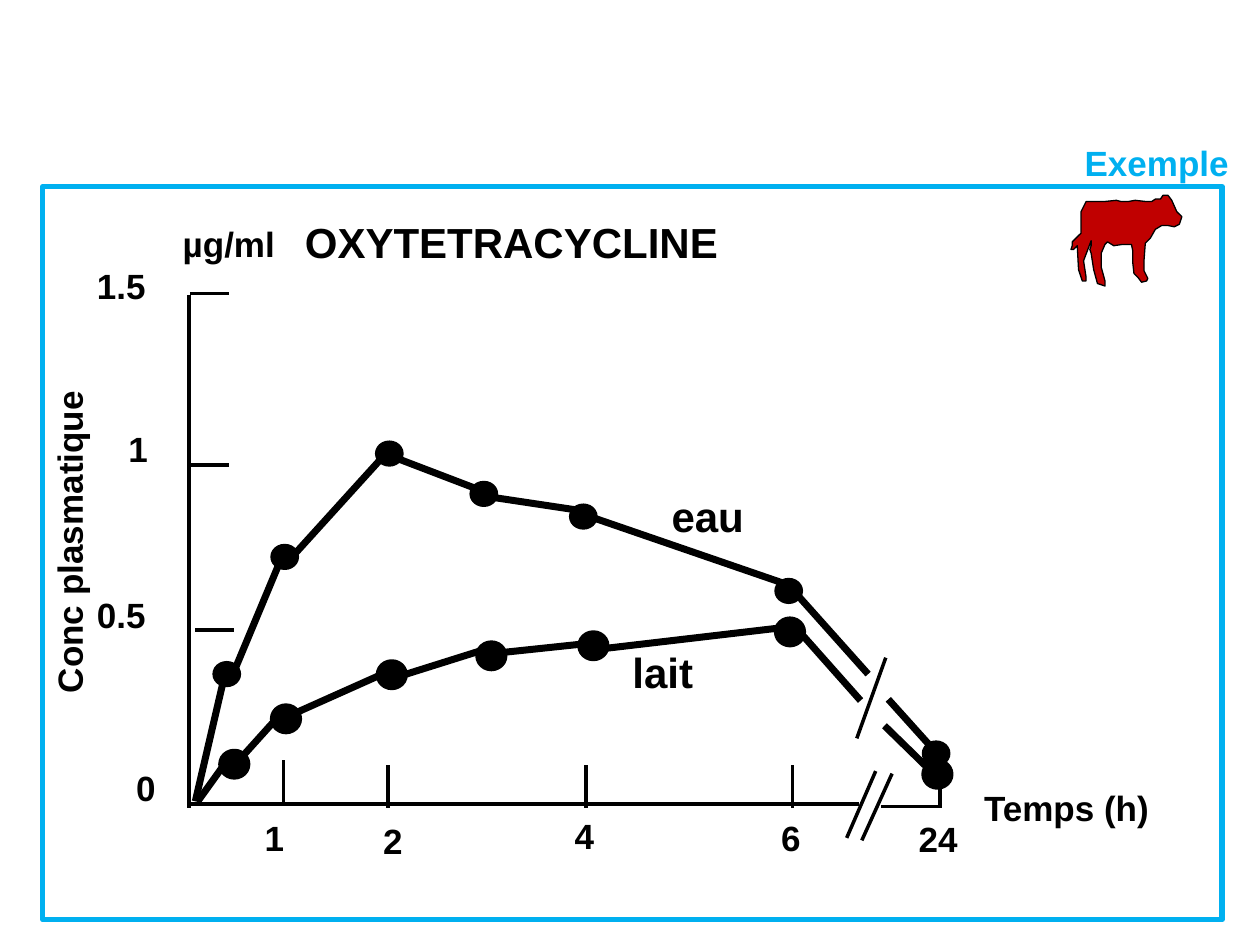
from lxml import etree
from pptx import Presentation
from pptx import util as u
from pptx.dml.color import RGBColor
from pptx.enum import shapes, text
from pptx.oxml.ns import qn

COLS = 100
WIDTH = u.Inches(10)
CELL = WIDTH // COLS
INK = {"black": "000000", "blue": "00B0F0", "red": "C00000"}

WATER_DOTS = [(17, 52.6), (21.6, 43.3), (29.9, 35.1), (37.4, 38.3),
              (45.3, 40.1), (61.6, 46), (73.3, 58.9)]
MILK_DOTS = [(17.6, 59.7), (21.7, 56.1), (30.1, 52.6), (38, 51.1),
             (46.1, 50.3), (61.7, 49.2), (73.4, 60.5)]
WATER = [(15.5, 63.6, 17.9, 53.3), (18.2, 54.2, 22.5, 43.9),
         (23, 44.4, 30.8, 35.8), (31.3, 36.3, 38.1, 38.9),
         (38.6, 39.4, 46.6, 40.6), (47.1, 41.1, 62.5, 46.4),
         (63, 46.9, 68.9, 53.5), (70.5, 55.5, 74.1, 59.5)]
MILK = [(15.7, 63.6, 18.5, 59.7), (19, 60.3, 22.7, 56.2),
        (23.2, 56.7, 30.8, 53.3), (31.3, 53.8, 38.3, 51.6),
        (38.8, 51.9, 47.3, 51), (47.7, 51.5, 63.1, 49.7),
        (63.6, 50.3, 68.3, 55.6), (70.2, 57.6, 74.5, 61.8)]
AXES = [(15.1, 63.8, 68.2, 63.8), (15, 64.1, 15, 23.4),
        (74.7, 64, 69.9, 64)]
BREAKS = [(70.3, 52.2, 68, 58.6), (69.5, 61.2, 67.2, 66.5),
          (70.8, 61.4, 68.4, 66.7)]
X_TICKS = [(22.5, 63.7), (30.8, 64.1), (46.5, 64.1), (62.9, 64.1), (74.6, 64.1)]
Y_TICKS = [(15.1, 23.3), (15.1, 36.9), (15.5, 50)]
SCALES = [("1", 9.5, 34, 3), ("1", 20.3, 64.9, 3), ("2", 29.7, 65.1, 3),
          ("4", 44.9, 64.7, 3), ("6", 61.3, 64.9, 3), ("24", 72.2, 65, 4.5),
          ("0.5", 7, 47.2, 5.3), ("0", 10.1, 60.9, 3), ("1.5", 7, 21.1, 5.3)]
COW = [(12, 69), (9, 69), (8, 66), (7, 63), (6, 60), (5, 41), (2, 44), (0, 44),
       (1, 41), (1, 38), (8, 31), (8, 14), (12, 6), (26, 6), (36, 5), (40, 6),
       (45, 6), (51, 5), (60, 6), (64, 6), (67, 4), (71, 4), (73, 1), (77, 1),
       (80, 5), (84, 14), (88, 18), (86, 24), (82, 26), (77, 25), (72, 25),
       (67, 28), (63, 35), (59, 39), (58, 52), (58, 61), (61, 67), (60, 69),
       (56, 70), (53, 66), (50, 63), (49, 54), (49, 45), (48, 40), (41, 40),
       (34, 41), (29, 38), (27, 40), (24, 47), (24, 58), (27, 69), (27, 73),
       (24, 72), (21, 71), (18, 60), (16, 47), (15, 44), (16, 41), (16, 37),
       (13, 45), (10, 53), (12, 66)]


def grid(*cells):
    return [int(n * CELL) for n in cells]


def tint(name):
    return RGBColor.from_string(INK[name])


def paint(shape, fill, edge, weight):
    shape.shadow.inherit = False
    if fill:
        shape.fill.solid()
        shape.fill.fore_color.rgb = tint(fill)
    else:
        shape.fill.background()
    shape.line.color.rgb = tint(edge)
    shape.line.width = u.Pt(weight)


def label(slide, words, box, size=20, color="black", space=0.9,
          pad=(0.7, 0.3), turn=0):
    shape = slide.shapes.add_textbox(*grid(*box))
    shape.rotation = turn
    frame = shape.text_frame
    frame.word_wrap = False
    frame.auto_size = text.MSO_AUTO_SIZE.SHAPE_TO_FIT_TEXT
    frame.margin_left = frame.margin_right = grid(pad[0])[0]
    frame.margin_top = frame.margin_bottom = grid(pad[1])[0]
    para = frame.paragraphs[0]
    para.line_spacing = space
    run = para.add_run()
    run.text = words
    run.font.name = "Arial"
    run.font.size = u.Pt(size)
    run.font.bold = True
    run.font.color.rgb = tint(color)


def strokes(slide, lines, weight):
    for ends in lines:
        line = slide.shapes.add_connector(shapes.MSO_CONNECTOR.STRAIGHT, *grid(*ends))
        line.line.color.rgb = tint("black")
        line.line.width = u.Pt(weight)
        etree.SubElement(line._element.spPr, qn("a:effectLst"))


def dots(slide, spots, high, weight):
    for left, top in spots:
        dot = slide.shapes.add_shape(shapes.MSO_SHAPE.OVAL, *grid(left, top, 2, high))
        paint(dot, "black", "black", weight)


def cow(slide):
    pen = slide.shapes.build_freeform(*COW[0], scale=CELL / 10)
    pen.add_line_segments(COW[1:], close=True)
    paint(pen.convert_to_shape(*grid(85, 15.4)), "red", "black", 0.75)


def main():
    deck = Presentation()
    deck.slide_width, deck.slide_height = WIDTH, WIDTH * 3 // 4
    slide = deck.slides.add_slide(deck.slide_layouts[6])

    frame = slide.shapes.add_shape(shapes.MSO_SHAPE.RECTANGLE,
                                   *grid(3.4, 14.8, 93.6, 58.2))
    paint(frame, None, "blue", 3)

    label(slide, "eau", (52.6, 39.1, 7.2, 4.2), size=24)
    label(slide, "lait", (49.5, 51.5, 6.3, 4.2), size=24)
    label(slide, "µg/ml", (13.8, 17.9, 8.8, 3.4), space=0.85)
    label(slide, "OXYTETRACYCLINE", (23.5, 17.3, 34.5, 4.2), size=24)
    label(slide, "Temps (h)", (77.4, 62.6, 14.6, 3.4), space=0.85)
    for words, left, top, wide in SCALES:
        label(slide, words, (left, top, wide, 3.6))

    dots(slide, WATER_DOTS, 1.8, 2)
    strokes(slide, WATER + MILK, 4)
    strokes(slide, AXES + BREAKS, 2)
    strokes(slide, [(x, y, x, y - 3.4) for x, y in X_TICKS], 2)
    strokes(slide, [(x, y, x + 3.1, y) for x, y in Y_TICKS], 2)
    dots(slide, MILK_DOTS, 1.9, 4)
    cow(slide)

    label(slide, "Exemple", (85.1, 10.7, 13.6, 4.4), color="blue",
          space=1, pad=(1, 0.5))
    label(slide, "Conc plasmatique", (-7.6, 40.7, 26.2, 4.4),
          space=1, pad=(1, 0.5), turn=270)
    deck.save("out.pptx")


if __name__ == "__main__":
    main()
